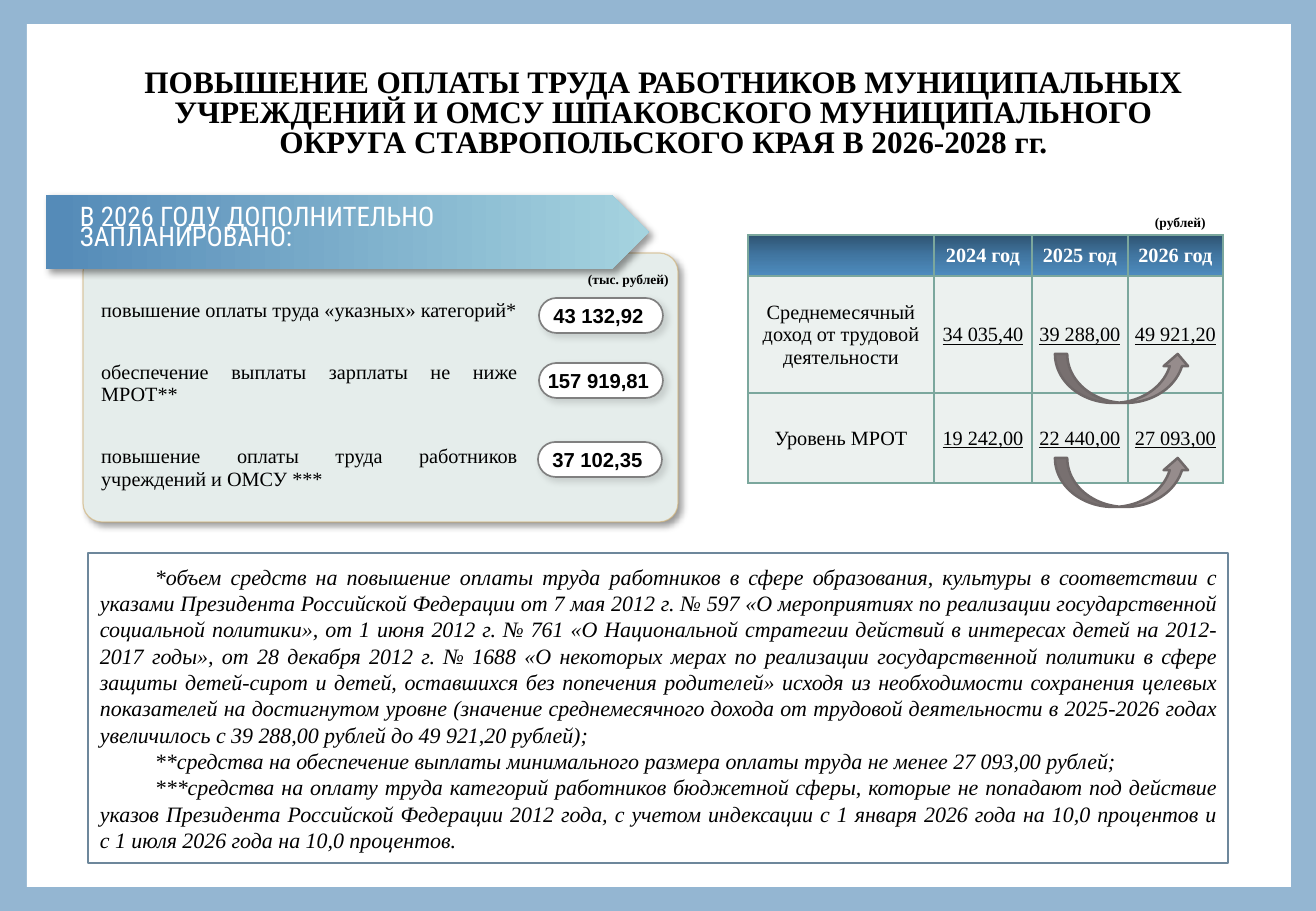
import pptx
import pptx.util
import pptx.oxml
import pptx.dml.color
import pptx.enum.shapes
import pptx.enum.text
from pptx.oxml.ns import qn, nsdecls

Pt = pptx.util.Pt
KIND = pptx.enum.shapes.MSO_SHAPE
ALIGN = pptx.enum.text.PP_ALIGN
MIDDLE = pptx.enum.text.MSO_ANCHOR.MIDDLE
SERIF = "Times New Roman"

# Content
TITLE = ("ПОВЫШЕНИЕ ОПЛАТЫ ТРУДА РАБОТНИКОВ МУНИЦИПАЛЬНЫХ УЧРЕЖДЕНИЙ И ОМСУ "
         "ШПАКОВСКОГО МУНИЦИПАЛЬНОГО ОКРУГА СТАВРОПОЛЬСКОГО КРАЯ В 2026-2028 гг.")
BANNER = "В 2026 ГОДУ ДОПОЛНИТЕЛЬНО ЗАПЛАНИРОВАНО:"
PLANS = [  # text, row height, value, left and top of the value
    ("повышение оплаты труда «указных» категорий*", 38, "43 132,92", 539, 298),
    ("обеспечение выплаты зарплаты не ниже МРОТ**", 108, "157 919,81", 539, 363),
    ("повышение оплаты труда работников учреждений и ОМСУ ***", 60, "37 102,35", 538, 442),
]
UNITS = [("(тыс. рублей)", 576, 265, 107), ("(рублей)", 1143, 208, 77)]
INCOME = [
    ["", "2024 год", "2025 год", "2026 год"],
    ["Среднемесячный\nдоход от трудовой деятельности", "34 035,40", "39 288,00", "49 921,20"],
    ["Уровень МРОТ", "19 242,00", "22 440,00", "27 093,00"],
]
NOTES = [
    "*объем средств на повышение оплаты труда работников в сфере образования, культуры "
    "в соответствии с указами Президента Российской Федерации от 7 мая 2012 г. № 597 "
    "«О мероприятиях по реализации государственной социальной политики», от 1 июня 2012 г. "
    "№ 761 «О Национальной стратегии действий в интересах детей на 2012-2017 годы», "
    "от 28 декабря 2012 г. № 1688 «О некоторых мерах по реализации государственной политики "
    "в сфере защиты детей-сирот и детей, оставшихся без попечения родителей» исходя из "
    "необходимости сохранения целевых показателей на достигнутом уровне (значение "
    "среднемесячного дохода от трудовой деятельности в 2025-2026 годах увеличилось "
    "с 39 288,00 рублей до 49 921,20 рублей);",
    "**средства на обеспечение выплаты минимального размера оплаты труда не менее "
    "27 093,00 рублей;",
    "***средства на оплату труда категорий работников бюджетной сферы, которые не попадают "
    "под действие указов Президента Российской Федерации 2012 года, с учетом индексации "
    "с 1 января 2026 года на 10,0 процентов и\vс 1 июля 2026 года на 10,0 процентов.",
]
HEX = dict(back="94B6D2", white="FFFFFF", black="000000", panel="E5EDEB", gold="D0AF72",
           pill="808080", glow="78B9EE", note="6D879B", grid="7BA79D", cell="ECF1EF",
           arrow="968C8C", edge="6F6868")
BLUES = [(2, "558BB8"), (100, "A5D3DF")]
HEADS = [(0, "2E5371"), (50, "4176A1"), (100, "4E8CBF")]


def px(n):
    return round(n * 914400 / 121.5)


def rgb(name):
    return pptx.dml.color.RGBColor.from_string(HEX[name])


def node(xml):
    return pptx.oxml.parse_xml(xml.replace(" ", f" {nsdecls('a')} ", 1))


def paint(fill, name):
    fill.solid()
    fill.fore_color.rgb = rgb(name)


def blend(fill, host, stops, angle):
    fill.gradient()
    grad = host.find(qn("a:gradFill"))
    for old in list(grad):
        grad.remove(old)
    marks = "".join(f'<a:gs pos="{at * 1000}"><a:srgbClr val="{tone}"/></a:gs>'
                    for at, tone in stops)
    grad.append(node(f'<a:gsLst >{marks}</a:gsLst>'))
    grad.append(node(f'<a:lin ang="{angle * 60000}" scaled="0"/>'))


def shape(kind, box, fill=None, line=None, width=1, shade=0):
    part = slide.shapes.add_shape(kind, *map(px, box))
    part.shadow.inherit = False
    if fill:
        paint(part.fill, fill)
    if line:
        part.line.color.rgb = rgb(line)
        part.line.width = Pt(width)
    else:
        part.line.fill.background()
    if shade:
        part._element.spPr.find(qn("a:effectLst")).append(node(
            f'<a:outerShdw blurRad="{Pt(4)}" dist="{Pt(3)}" dir="2700000" algn="tl" '
            f'rotWithShape="0"><a:srgbClr val="000000"><a:alpha val="{shade * 1000}"/>'
            '</a:srgbClr></a:outerShdw>'))
    return part


def write(frame, lines, size, align=ALIGN.LEFT, color="black", face=SERIF, lead=None, **looks):
    for i, text in enumerate(lines):
        para = frame.paragraphs[0] if i == 0 else frame.add_paragraph()
        para.text = text
        para.alignment = align
        if lead:
            para.line_spacing = Pt(lead)
        font = para.font
        font.size, font.name, font.color.rgb = Pt(size), face, rgb(color)
        for key, val in looks.items():
            setattr(font, key, val)


def inset(part, *sides):
    part.margin_left, part.margin_top, part.margin_right, part.margin_bottom = map(px, sides)


def label(box, wrap=True):
    frame = slide.shapes.add_textbox(*map(px, box)).text_frame
    frame.word_wrap = wrap
    return frame


def table(left, top, cols, rows):
    grid = slide.shapes.add_table(len(rows), len(cols), px(left), px(top),
                                  px(sum(cols)), px(sum(rows))).table
    grid.first_row = grid.horz_banding = False
    for part, size in zip(grid.columns, cols):
        part.width = px(size)
    for part, size in zip(grid.rows, rows):
        part.height = px(size)
    return grid


def border(cell, name=None):
    ink = f'<a:solidFill><a:srgbClr val="{HEX[name]}"/></a:solidFill>' if name else '<a:noFill/>'
    for side in "LRTB":
        cell._tc.get_or_add_tcPr().append(node(f'<a:ln{side} w="{Pt(1)}">{ink}</a:ln{side}>'))


deck = pptx.Presentation()
deck.slide_width, deck.slide_height = px(1316), px(911)
slide = deck.slides.add_slide(deck.slide_layouts[6])
paint(slide.background.fill, "back")
shape(KIND.RECTANGLE, (27, 24, 1264, 863), "white")

# Title
frame = label((112, 69, 1102, 92))
inset(frame, 0, 0, 0, 0)
write(frame, [TITLE], 18.5, ALIGN.CENTER, lead=18, bold=True)
frame.paragraphs[0].runs[0]._r.get_or_add_rPr().insert(0, node(
    f'<a:ln w="{Pt(0.07)}"><a:solidFill><a:srgbClr val="{HEX["glow"]}">'
    '<a:alpha val="55000"/></a:srgbClr></a:solidFill></a:ln>'))

# Panel and banner
panel = shape(KIND.ROUNDED_RECTANGLE, (83, 253, 595, 269), "panel", "gold", 0.75, 40)
panel.adjustments[0] = 0.07
panel.line._get_or_add_ln().find(".//" + qn("a:srgbClr")).append(node('<a:alpha val="60000"/>'))
banner = shape(KIND.PENTAGON, (46, 195, 603, 74), shade=40)
blend(banner.fill, banner._element.spPr, BLUES, 0)
frame = banner.text_frame
frame.word_wrap, frame.vertical_anchor = True, MIDDLE
inset(frame, 34, 6, 12, 6)
write(frame, [BANNER], 16, color="white", face="Roboto Condensed", lead=12)

# Planned sums
plans = table(89, 292, [441], [plan[1] for plan in PLANS])
for row, (text, _, value, left, top) in enumerate(PLANS):
    cell = plans.cell(row, 0)
    border(cell)
    cell.fill.background()
    cell.vertical_anchor = MIDDLE
    write(cell.text_frame, [text], 12, ALIGN.JUSTIFY)
    pill = shape(KIND.ROUNDED_RECTANGLE, (left, top, 124, 35), "white", "pill", 1, 12)
    pill.adjustments[0] = 0.5
    frame = pill.text_frame
    frame.vertical_anchor = MIDDLE
    inset(frame, 0, 0, 5, 0)
    write(frame, [value], 12, ALIGN.CENTER, face="Arial", bold=True)

# Notes
box = shape(KIND.RECTANGLE, (88, 553, 1140, 310), "white", "note", 1.5)
frame = box.text_frame
frame.word_wrap, frame.vertical_anchor = True, MIDDLE
write(frame, NOTES, 13, ALIGN.JUSTIFY, italic=True)
for para in frame.paragraphs:
    para._p.get_or_add_pPr().set("indent", str(px(55)))

# Income table
income = table(748, 235, [186, 98, 96, 95], [41, 117, 90])
for row, texts in enumerate(INCOME):
    for col, text in enumerate(texts):
        cell = income.cell(row, col)
        border(cell, "grid")
        cell.vertical_anchor = MIDDLE
        inset(cell, 1, 1, 1, 0)
        if row == 0:
            blend(cell.fill, cell._tc.tcPr, HEADS, 90)
        else:
            paint(cell.fill, "cell")
        write(cell.text_frame, text.split("\n"), 12, ALIGN.CENTER,
              "black" if row else "white", bold=row == 0, underline=row > 0 and col > 0)

# Units and growth arrows
for text, left, top, wide in UNITS:
    write(label((left, top, wide, 29), False), [text], 8, bold=True)
for top in (354, 458):
    shape(KIND.CURVED_UP_ARROW, (1055, top, 135, 49), "arrow", "edge", 1.5)

deck.save("out.pptx")
